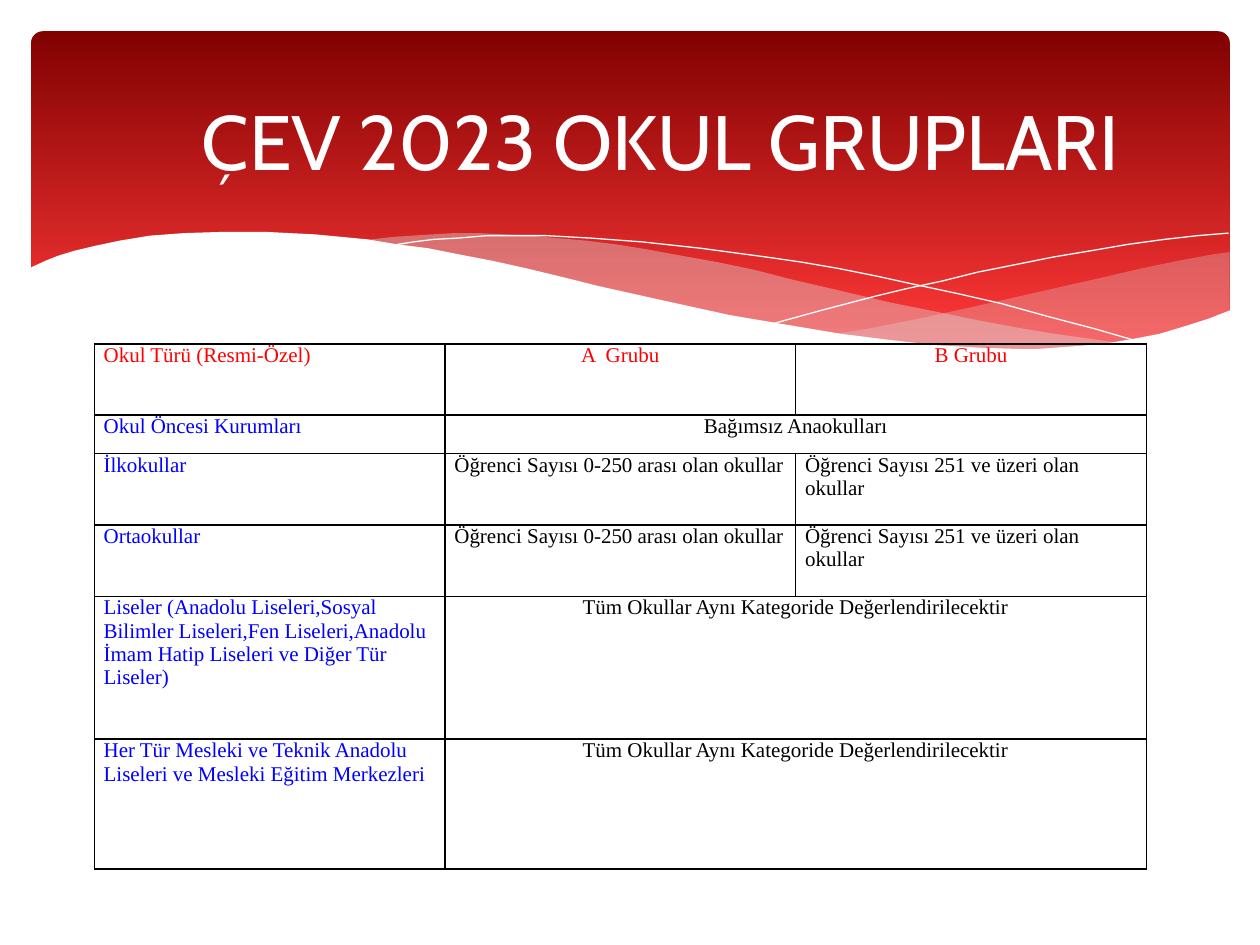
from lxml import etree
from pptx import Presentation
from pptx.dml.color import RGBColor
from pptx.enum.shapes import MSO_SHAPE
from pptx.enum.text import MSO_ANCHOR, PP_ALIGN
from pptx.oxml import parse_xml
from pptx.oxml.ns import qn
from pptx.util import Cm, Pt

ROUND = MSO_SHAPE.ROUNDED_RECTANGLE
MIDDLE = MSO_ANCHOR.MIDDLE
LEFT, CENTER = PP_ALIGN.LEFT, PP_ALIGN.CENTER
NS = "http://schemas.openxmlformats.org/drawingml/2006/main"
HEX = {"dark": "820101", "light": "FE3737", "mist": "DEDEE0", "white": "FFFFFF",
       "red": "FF0000", "blue": "0000FF", "black": "000000"}
RGB = {name: RGBColor.from_string(code) for name, code in HEX.items()}

prs = Presentation()
prs.slide_width, prs.slide_height = Cm(25.4), Cm(19.05)
slide = prs.slides.add_slide(prs.slide_layouts[6])
shapes = slide.shapes


def draw(points, closed):
    """Draw an outline from points in hundredths of an inch."""
    form = shapes.build_freeform(*points[0], scale=Cm(0.0254))
    form.add_line_segments(points[1:], close=closed)
    shape = form.convert_to_shape()
    shape.shadow.inherit = False
    return shape


def style(par, text, font, size, color, align):
    par.text = text
    par.alignment = align
    run = par.runs[0]
    run.font.name, run.font.size = font, Pt(size)
    run.font.color.rgb = RGB[color]


# Red banner
banner = shapes.add_shape(ROUND, Cm(0.63), Cm(0.63), Cm(24.16), Cm(6.86))
banner.adjustments[0] = 0.034
banner.shadow.inherit = False
banner.line.fill.background()
banner.fill.gradient()
banner.fill.gradient_angle = 270
for stop, place, name in zip(banner.fill.gradient_stops, (0, 0.9), ("dark", "light")):
    stop.position = place
    stop.color.rgb = RGB[name]

# Waves: points, colour, opacity in percent
right = [(976, 200), (962, 202), (935, 207), (906, 213), (876, 220), (832, 230),
         (779, 242), (729, 253), (683, 262), (661, 265), (691, 269), (719, 272),
         (745, 275), (769, 277), (803, 278), (835, 277), (863, 275), (889, 272),
         (913, 267), (935, 262), (949, 257), (963, 252), (976, 247)]
middle = [(893, 273), (866, 269), (837, 265), (807, 260), (775, 254), (741, 247),
          (706, 240), (668, 231), (629, 222), (598, 214), (569, 208), (541, 203),
          (514, 198), (489, 194), (465, 191), (442, 189), (420, 187), (399, 186),
          (380, 185), (361, 185), (344, 186), (313, 188), (286, 191), (323, 196),
          (362, 203), (404, 211), (449, 222), (491, 232), (530, 240), (566, 248),
          (601, 255), (634, 261), (665, 266), (695, 270), (722, 274), (748, 276),
          (773, 277), (796, 278), (828, 278), (857, 277), (876, 275)]
front = [(977, 246), (959, 253), (940, 259), (920, 265), (899, 269), (875, 273),
         (850, 275), (823, 277), (809, 277), (778, 276), (744, 274), (708, 270),
         (668, 265), (626, 258), (579, 250), (529, 239), (475, 227), (447, 220),
         (418, 213), (391, 207), (365, 202), (340, 197), (316, 194), (292, 190),
         (271, 188), (250, 186), (230, 185), (211, 184), (177, 184), (146, 185),
         (119, 187), (95, 191), (76, 195), (59, 199), (46, 203), (36, 207),
         (23, 213), (23, 329), (977, 329)]
falling = [(309, 195), (328, 192), (344, 190), (363, 189), (387, 187), (433, 187),
           (469, 189), (510, 192), (556, 197), (608, 204), (636, 208), (665, 213),
           (695, 219), (727, 226), (760, 233), (795, 241), (831, 251), (869, 261),
           (907, 272)]
rising = [(613, 257), (653, 246), (695, 235), (720, 229), (748, 223), (776, 216),
          (806, 210), (836, 204), (866, 199), (895, 194), (924, 190), (951, 187),
          (975, 185)]

for points, name, alpha in ((right, "mist", 29), (middle, "mist", 40),
                            (falling, None, 0), (rising, None, 0),
                            (front, "white", 100)):
    wave = draw(points, closed=name is not None)
    if name is None:
        wave.fill.background()
        wave.line.color.rgb = RGB["white"]
        wave.line.width = Pt(0)
        continue
    wave.line.fill.background()
    wave.fill.solid()
    wave.fill.fore_color.rgb = RGB[name]
    if alpha < 100:
        tint = wave.fill._xPr.find(qn("a:solidFill"))[0]
        etree.SubElement(tint, qn("a:alpha")).set("val", str(alpha * 1000))

# Title
box = shapes.add_textbox(Cm(1.27), Cm(0.94), Cm(22.86), Cm(3.48))
frame = box.text_frame
frame.word_wrap = True
frame.vertical_anchor = MIDDLE
par = frame.paragraphs[0]
style(par, "ÇEV 2023 OKUL GRUPLARI", "Cabin", 44, "white", CENTER)
par.line_spacing, par.space_after = 1.15, Pt(10)
par._p.get_or_add_pPr().set("indent", str(Cm(1.24)))

# Table of school groups; a row with two texts merges its last two cells
small = "Öğrenci Sayısı 0-250 arası olan okullar"
large = "Öğrenci Sayısı 251 ve üzeri olan okullar"
same = "Tüm Okullar Aynı Kategoride Değerlendirilecektir"
rows = [
    (1.44, "Okul Türü (Resmi-Özel)", "A  Grubu", "B Grubu"),
    (0.77, "Okul Öncesi Kurumları", "Bağımsız Anaokulları"),
    (1.44, "İlkokullar", small, large),
    (1.44, "Ortaokullar", small, large),
    (2.88, "Liseler (Anadolu Liseleri,Sosyal Bilimler Liseleri,Fen Liseleri,"
           "Anadolu İmam Hatip Liseleri ve Diğer Tür Liseler)", same),
    (2.62, "Her Tür Mesleki ve Teknik Anadolu Liseleri ve Mesleki Eğitim Merkezleri",
     same),
]
high = sum(row[0] for row in rows)
table = shapes.add_table(len(rows), 3, Cm(1.9), Cm(6.93), Cm(21.21), Cm(high)).table
table.first_row = table.horz_banding = False
for col in table.columns:
    col.width = Cm(7.07)

for i, (tall, *texts) in enumerate(rows):
    table.rows[i].height = Cm(tall)
    if len(texts) == 2:
        table.cell(i, 1).merge(table.cell(i, 2))
    for j in range(3):
        cell = table.cell(i, j)
        cell.margin_left = cell.margin_right = Cm(0.19)
        cell.margin_top = cell.margin_bottom = 0
        props = cell._tc.get_or_add_tcPr()
        for side in ("lnL", "lnR", "lnT", "lnB"):
            props.append(parse_xml(
                f'<a:{side} xmlns:a="{NS}" w="{Pt(1)}"><a:solidFill>'
                f'<a:srgbClr val="{HEX["black"]}"/></a:solidFill></a:{side}>'))
        cell.fill.background()
        if j < len(texts):
            color = "red" if i == 0 else "black" if j else "blue"
            align = CENTER if j and (i == 0 or len(texts) == 2) else LEFT
            style(cell.text_frame.paragraphs[0], texts[j], "Times New Roman", 12,
                  color, align)
        else:
            cell.text_frame.paragraphs[0].font.size = Pt(12)

prs.save("out.pptx")
